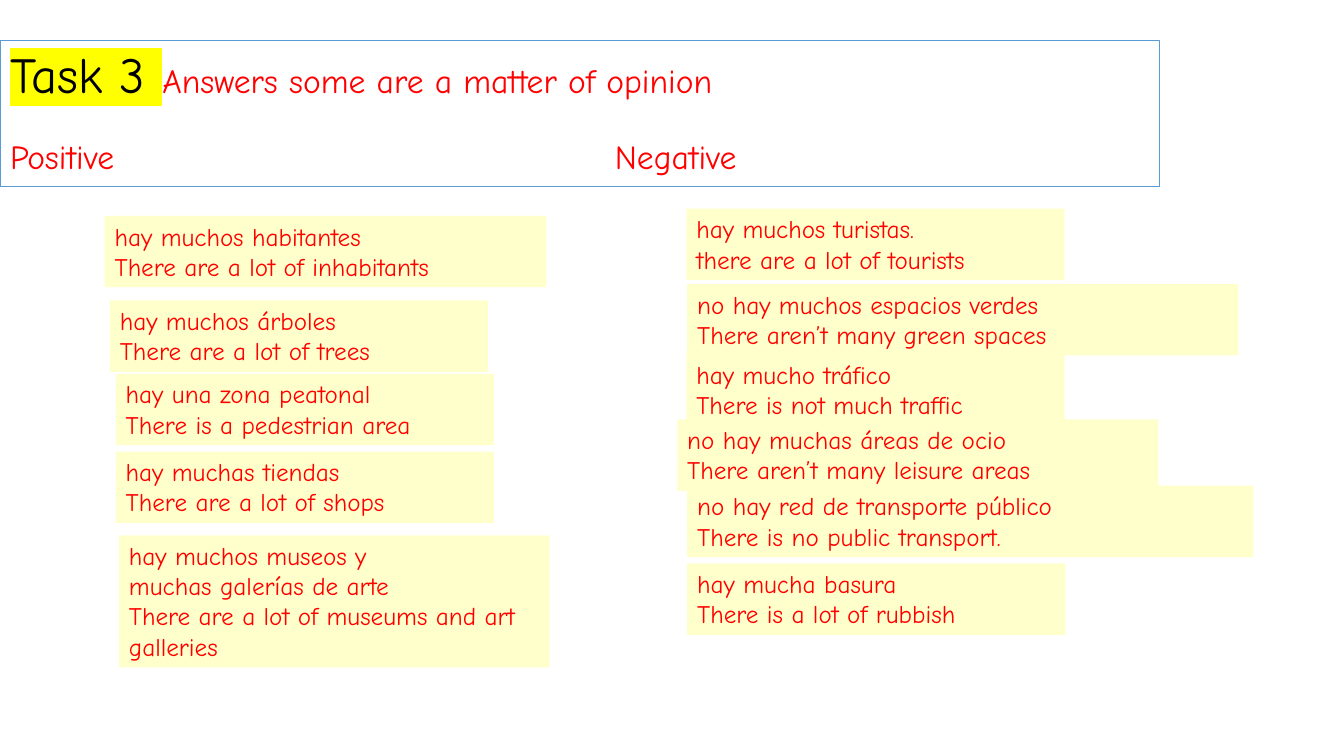
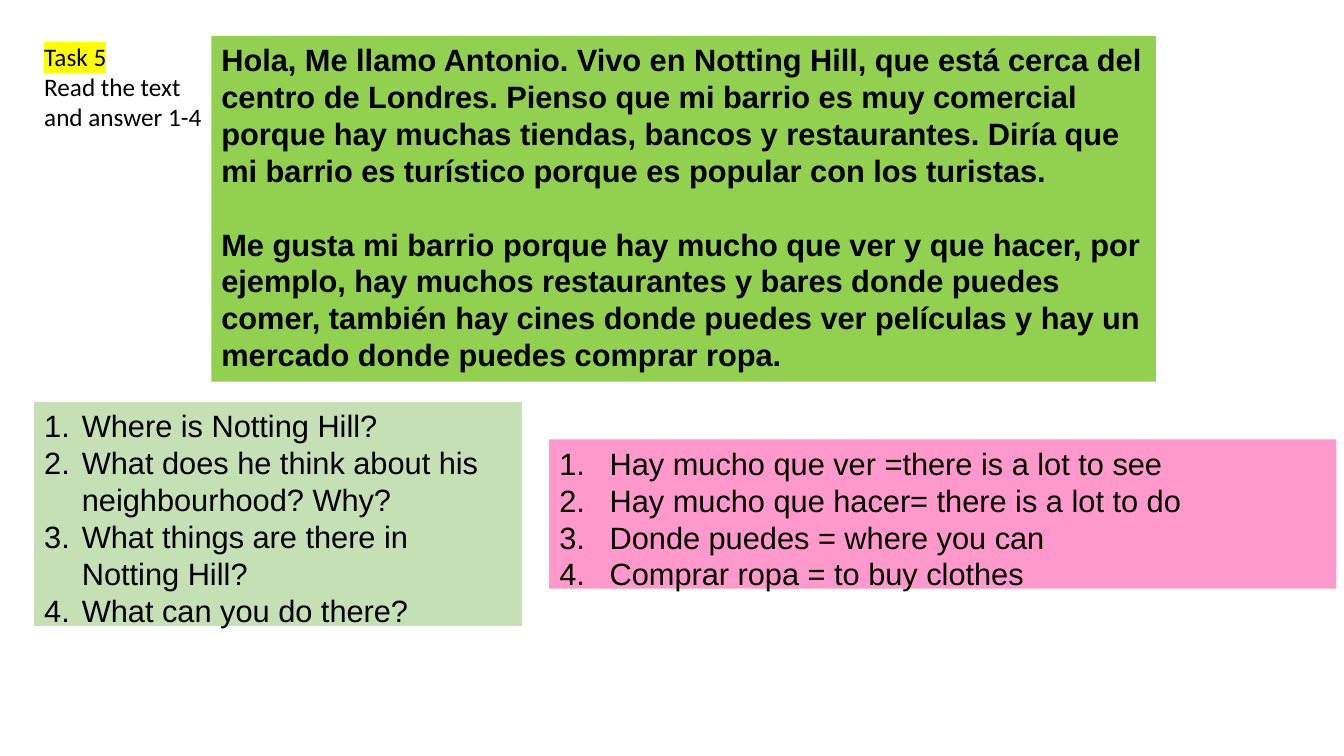
import dataclasses

import lxml.etree
import pptx
import pptx.dml.color
import pptx.enum.text
import pptx.oxml.ns
import pptx.util
from pptx.util import Cm, Pt


@dataclasses.dataclass(frozen=True)
class Theme:
    black: str = "000000"
    red: str = "FF0000"
    white: str = "FFFFFF"
    frame: str = "5B9BD5"
    highlight: str = "FFFF00"
    phrase_fill: str = "FFFFCC"
    passage_fill: str = "92D050"
    questions_fill: str = "C5E0B4"
    glossary_fill: str = "FF99CC"
    playful_font: str = "Comic Neue"
    reading_font: str = "Arial"
    label_font: str = "Calibri"
    task_size: int = 36
    title_size: int = 24
    reading_size: int = 22
    small_size: int = 18


theme = Theme()
rgb = pptx.dml.color.RGBColor.from_string
qn = pptx.oxml.ns.qn


def fill_box(box, place, lines, font, size, color, fill=None):
    """Place a box (left, top, width, height in cm) and write one paragraph per line."""
    box.left, box.top, box.width, box.height = map(Cm, place)
    if fill:
        box.fill.solid()
        box.fill.fore_color.rgb = rgb(fill)
    frame = box.text_frame
    frame.text = "\n".join(lines)
    frame.word_wrap = True
    frame.auto_size = pptx.enum.text.MSO_AUTO_SIZE.SHAPE_TO_FIT_TEXT
    frame.vertical_anchor = pptx.enum.text.MSO_ANCHOR.TOP
    for para in frame.paragraphs:
        para.alignment = pptx.enum.text.PP_ALIGN.LEFT
        para.space_before = Pt(0)
        for span in para.runs:
            span.font.name = font
            span.font.size = Pt(size)
            span.font.color.rgb = rgb(color)
    return frame


def highlight(span):
    properties = span.font._element
    mark = lxml.etree.Element(qn("a:highlight"))
    lxml.etree.SubElement(mark, qn("a:srgbClr"), val=theme.highlight)
    properties.find(qn("a:latin")).addprevious(mark)


deck = pptx.Presentation()
deck.slide_width, deck.slide_height = Cm(33.87), Cm(19.05)

# Task 3: positive and negative phrases
answers = deck.slides.add_slide(deck.slide_layouts.get_by_name("Title Only"))
title = answers.shapes.title
title_frame = fill_box(
    title, (0, 1.02, 29.21, 3.68),
    ["Answers some are a matter of opinion", "Positive\tNegative"],
    theme.playful_font, theme.title_size, theme.red, theme.white)
title.line.color.rgb = rgb(theme.frame)
title.line.width = Pt(0.75)
title_frame.auto_size = pptx.enum.text.MSO_AUTO_SIZE.NONE
title_frame.vertical_anchor = pptx.enum.text.MSO_ANCHOR.MIDDLE
heading, columns = title_frame.paragraphs
heading.line_spacing = columns.line_spacing = 0.9
columns.space_before = Pt(26)
tabs = lxml.etree.SubElement(columns._p.get_or_add_pPr(), qn("a:tabLst"))
lxml.etree.SubElement(tabs, qn("a:tab"), pos=str(Cm(15.24)), algn="l")

opinion = heading.runs[0]
task = heading.add_run()
task.text = "Task 3 "
task.font.name = theme.playful_font
task.font.size = Pt(theme.task_size)
task.font.color.rgb = rgb(theme.black)
highlight(task)
opinion._r.addprevious(task._r)

two_lines, four_lines = 1.8, 3.33
phrases = [
    # positive
    ((2.64, 5.44, 11.13, two_lines), ["hay muchos habitantes", "There are a lot of inhabitants"]),
    ((2.77, 7.57, 9.53, two_lines), ["hay muchos árboles", "There are a lot of trees"]),
    ((2.92, 9.42, 9.53, two_lines), ["hay una zona peatonal", "There is a pedestrian area"]),
    ((2.92, 11.38, 9.53, two_lines), ["hay muchas tiendas", "There are a lot of shops"]),
    ((3, 13.49, 10.85, four_lines),
     ["hay muchos museos y", "muchas galerías de arte",
      "There are a lot of museums and art galleries"]),
    # negative
    ((17.3, 5.26, 9.53, two_lines), ["hay muchos turistas.", "there are a lot of tourists"]),
    ((17.32, 7.16, 13.89, two_lines),
     ["no hay muchos espacios verdes", "There aren’t many green spaces"]),
    ((17.3, 8.92, 9.53, two_lines), ["hay mucho tráfico", "There is not much traffic"]),
    ((17.07, 10.57, 12.12, two_lines),
     ["no hay muchas áreas de ocio", "There aren’t many leisure areas"]),
    ((17.32, 12.24, 14.27, two_lines),
     ["no hay red de transporte público", "There is no public transport."]),
    ((17.32, 14.2, 9.53, two_lines), ["hay mucha basura", "There is a lot of rubbish"]),
]
for place, lines in phrases:
    card = answers.shapes.add_textbox(0, 0, 0, 0)
    fill_box(card, place, lines, theme.playful_font, theme.small_size,
             theme.red, theme.phrase_fill)

# Task 5: reading passage, questions and glossary
reading = deck.slides.add_slide(deck.slide_layouts.get_by_name("Two Content"))
label_frame = fill_box(
    reading.shapes.title, (0.86, 0.91, 4.52, 2.57),
    ["Task 5", "Read the text", "and answer 1-4"],
    theme.label_font, theme.small_size, theme.black)
label_frame.word_wrap = False
highlight(label_frame.paragraphs[0].runs[0])

passage_frame = fill_box(
    reading.shapes.add_textbox(0, 0, 0, 0), (5.33, 0.91, 23.8, 8.71),
    ["Hola, Me llamo Antonio. Vivo en Notting Hill, que está cerca del centro de Londres. "
     "Pienso que mi barrio es muy comercial porque hay muchas tiendas, bancos y restaurantes. "
     "Diría que mi barrio es turístico porque es popular con los turistas.",
     "Me gusta mi barrio porque hay mucho que ver y que hacer, por ejemplo, hay muchos "
     "restaurantes y bares donde puedes comer, también hay cines donde puedes ver películas "
     "y hay un mercado donde puedes comprar ropa."],
    theme.reading_font, theme.reading_size, theme.black, theme.passage_fill)
passage_frame.paragraphs[1].space_before = Pt(26)
for para in passage_frame.paragraphs:
    para.runs[0].font.bold = True

numbered_lists = [
    (1, (0.86, 10.13, 12.29, 5.89), theme.questions_fill, 0.95,
     ["Where is Notting Hill?", "What does he think about his neighbourhood? Why?",
      "What things are there in Notting Hill?", "What can you do there?"]),
    (2, (13.84, 11.07, 19.84, 4.01), theme.glossary_fill, 1.27,
     ["Hay mucho que ver =there is a lot to see", "Hay mucho que hacer= there is a lot to do",
      "Donde puedes = where you can", "Comprar ropa = to buy clothes"]),
]
for index, place, fill, indent, lines in numbered_lists:
    list_frame = fill_box(reading.placeholders[index], place, lines, theme.reading_font,
                          theme.reading_size, theme.black, fill)
    for para in list_frame.paragraphs:
        properties = para._p.get_or_add_pPr()
        properties.set("marL", str(Cm(indent)))
        properties.set("indent", str(-Cm(indent)))
        lxml.etree.SubElement(properties, qn("a:buFont"), typeface="+mj-lt")
        lxml.etree.SubElement(properties, qn("a:buAutoNum"), type="arabicPeriod")

deck.save("out.pptx")
